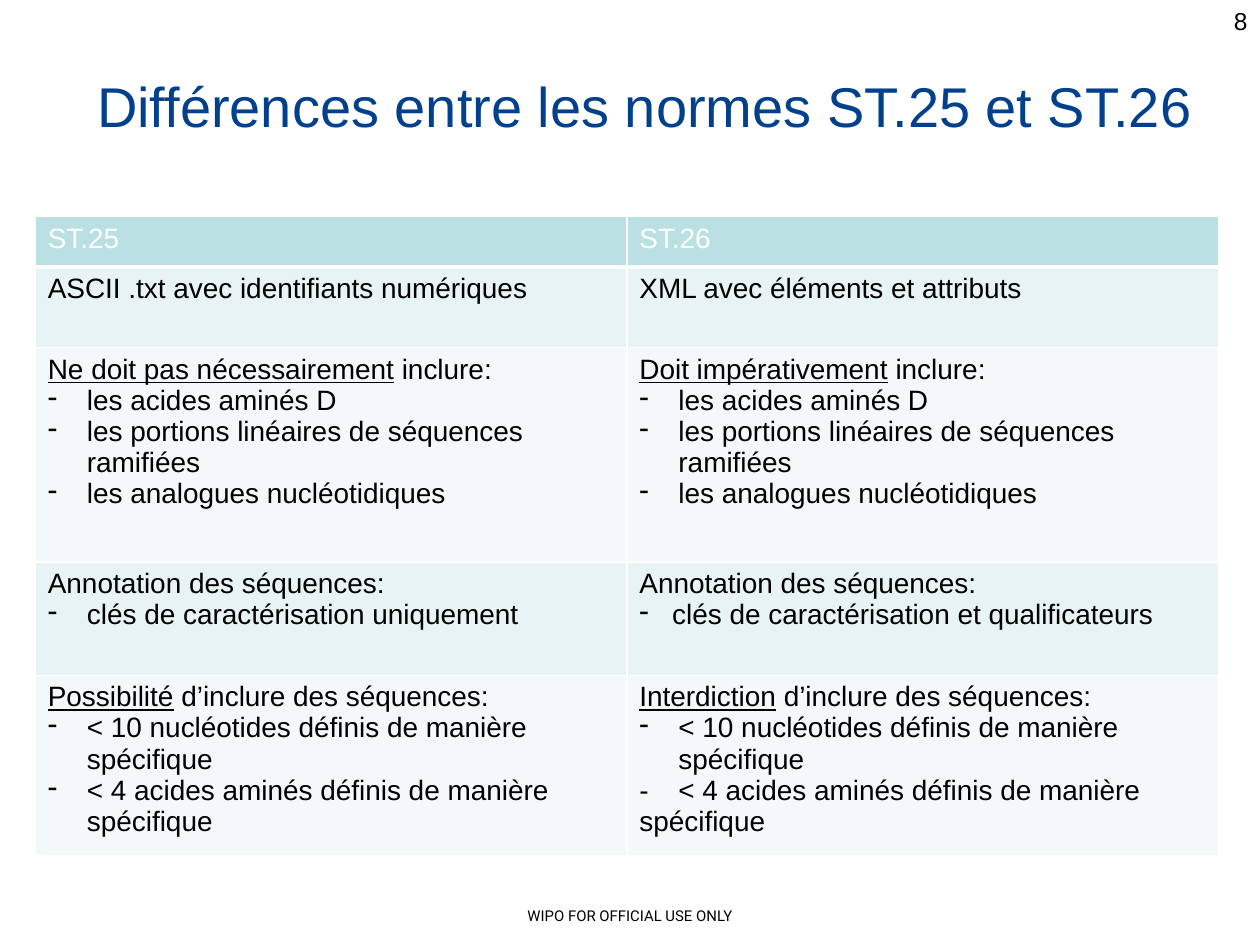
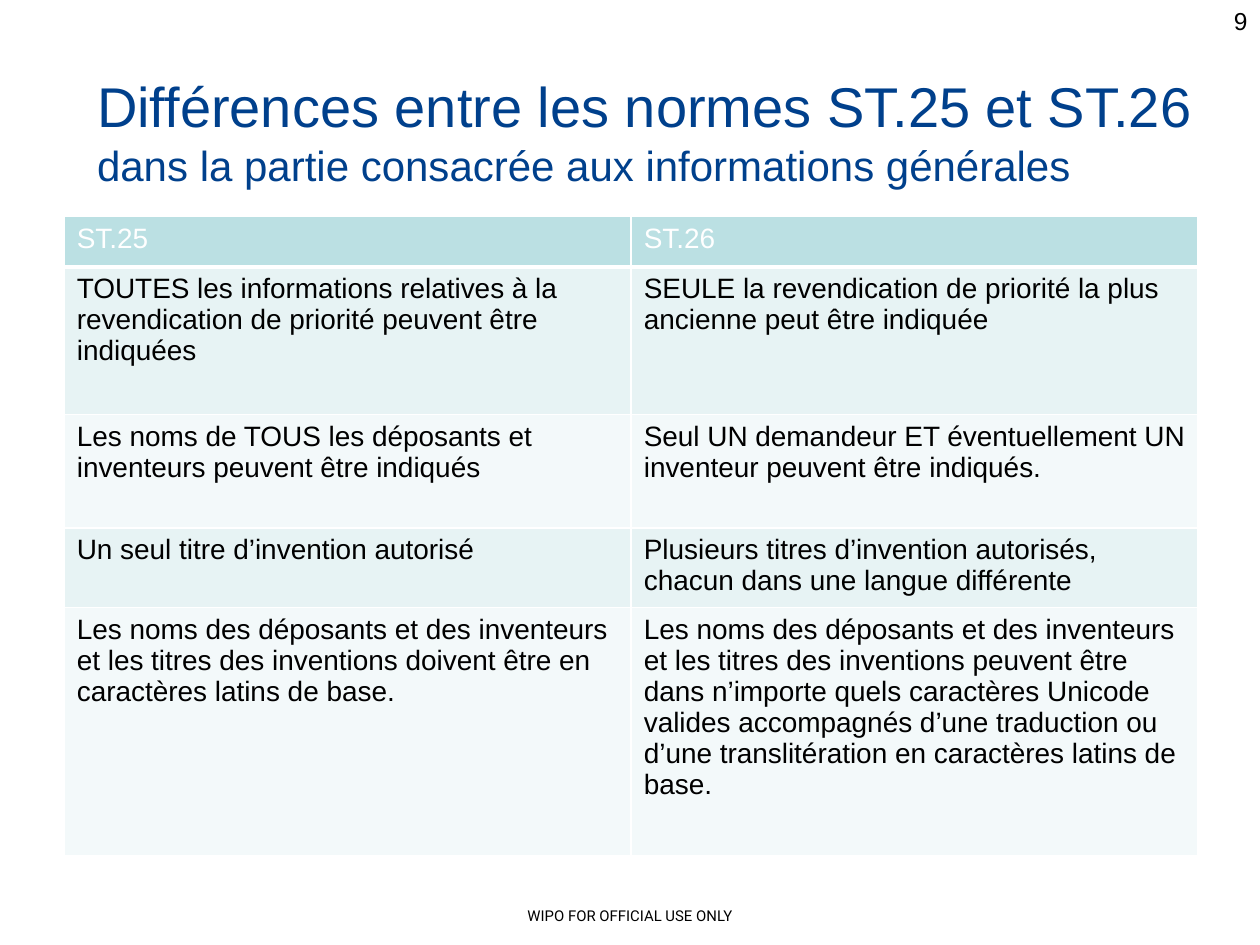
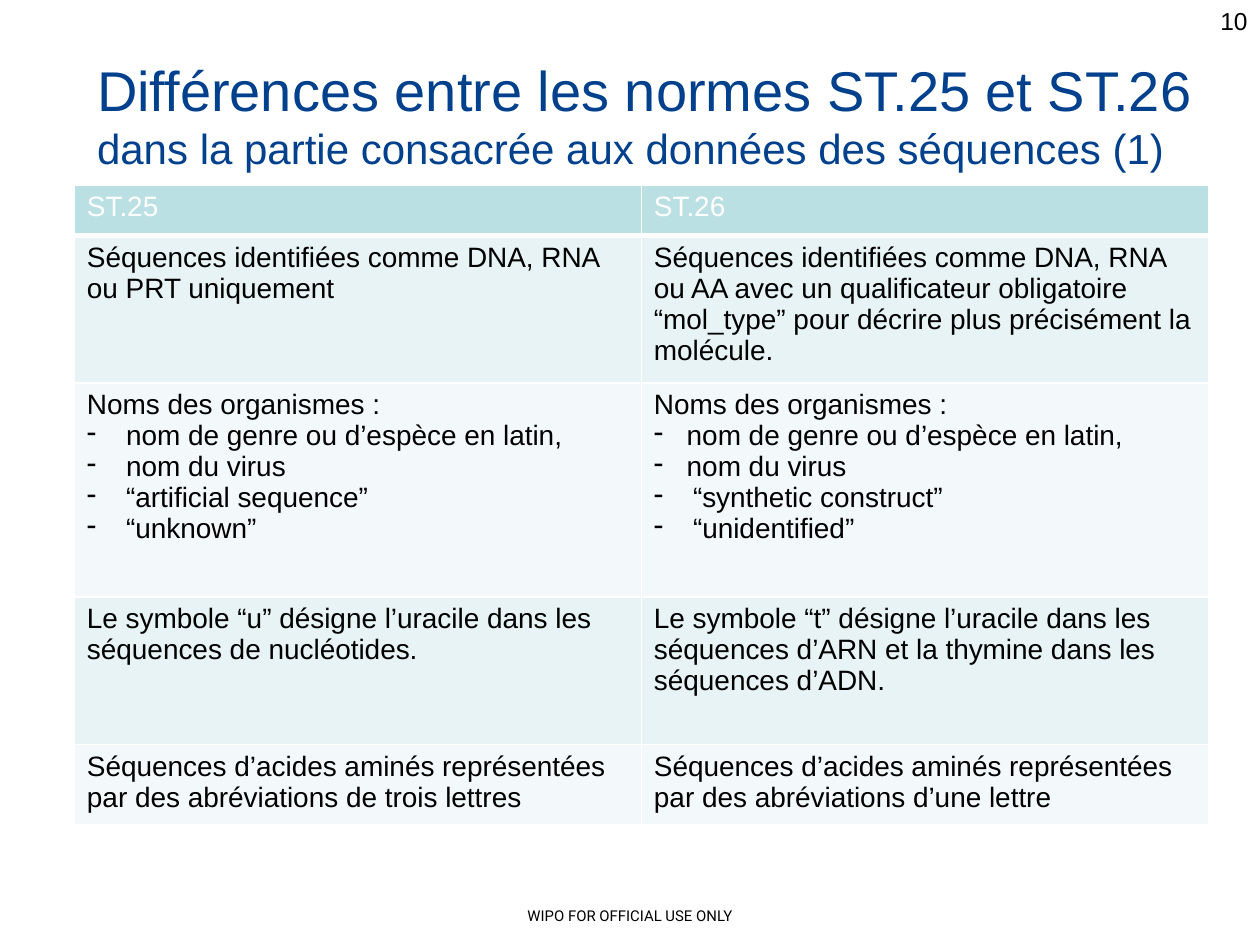
from dataclasses import dataclass

from lxml import etree
from pptx import Presentation
from pptx.dml.color import RGBColor
from pptx.enum.text import MSO_ANCHOR, MSO_AUTO_SIZE, PP_ALIGN
from pptx.oxml.ns import qn
from pptx.util import Inches, Pt

LEFT, MID, RIGHT = PP_ALIGN.LEFT, PP_ALIGN.CENTER, PP_ALIGN.RIGHT
TOP = MSO_ANCHOR.TOP
FIXED = MSO_AUTO_SIZE.NONE
COLS, ROWS = 100, 75


@dataclass(frozen=True)
class Theme:
    ink: str = "000000"
    navy: str = "00408C"
    white: str = "FFFFFF"
    head: str = "BBE0E3"
    bands: tuple = ("F3F9FA", "E7F3F4")
    face: str = "Arial"
    foot: str = "Roboto"
    big: float = 32
    sub: float = 24
    body: float = 16
    page: float = 14
    note: float = 8.5
    hang: float = 0.31
    tight: float = 0.26


class Deck:
    def __init__(self, theme):
        self.theme = theme
        self.prs = Presentation()
        self.prs.slide_width, self.prs.slide_height = Inches(10), Inches(7.5)
        self.base = self.prs.slide_layouts[5]
        self.slide = None

    def at(self, x, y, wide, high):
        col, row = self.prs.slide_width / COLS, self.prs.slide_height / ROWS
        return int(x * col), int(y * row), int(wide * col), int(high * row)

    def font(self, para, size, color, face=None):
        font = para.font
        font.size = Pt(size)
        font.name = face or self.theme.face
        font.color.rgb = RGBColor.from_string(color)

    def start(self, page):
        self.slide = self.prs.slides.add_slide(self.base)
        if page == FIRST:
            box = self.label("WIPO FOR OFFICIAL USE ONLY", (0, 71.5, 100, 2.4),
                             MID, self.theme.note, self.theme.foot)
            self.base.shapes.element.append(box.element)
        self.label(str(page), (76.7, 0, 23.3, 5.2), RIGHT, self.theme.page)

    def label(self, text, spot, align, size, face=None):
        box = self.slide.shapes.add_textbox(*self.at(*spot))
        box.text_frame.word_wrap = True
        para = box.text_frame.paragraphs[0]
        para.text, para.alignment = text, align
        self.font(para, size, self.theme.ink, face)
        return box

    def title(self, lines, y):
        shape = self.slide.shapes.title
        shape.left, shape.top, shape.width, shape.height = self.at(6.7, y, 90, 12.5)
        frame = shape.text_frame
        frame.auto_size, frame.vertical_anchor = FIXED, TOP
        frame.margin_top = Inches(0.1)
        frame.text = "\n".join(lines)
        for para, size in zip(frame.paragraphs, (self.theme.big, self.theme.sub)):
            para.alignment = LEFT
            self.font(para, size, self.theme.navy)

    def table(self, x, y, wide, highs, rows):
        rows = [("ST.25", "ST.26"), *rows]
        grid = self.slide.shapes.add_table(
            len(rows), 2, *self.at(x, y, wide, sum(highs))).table
        for num, (high, texts) in enumerate(zip(highs, rows)):
            grid.rows[num].height = self.at(0, 0, 0, high)[3]
            for col, text in enumerate(texts):
                self.cell(grid.cell(num, col), text, num == 0,
                          self.theme.bands[num % 2])

    def cell(self, cell, text, top, band):
        look = self.theme
        self.edges(cell, 3 if top else 1)
        cell.fill.solid()
        cell.fill.fore_color.rgb = RGBColor.from_string(look.head if top else band)
        for num, line in enumerate(text.split("\n")):
            frame = cell.text_frame
            para = frame.add_paragraph() if num else frame.paragraphs[0]
            self.fill(para, self.mark(para, line))
            self.font(para, look.body, look.white if top else look.ink)

    def mark(self, para, line):
        look = self.theme
        props = para._p.get_or_add_pPr()
        sign, rest = line[:2], line[2:]
        if sign in ("- ", "~ "):
            step = Inches(look.hang if sign == "- " else look.tight)
            props.set("marL", str(step))
            props.set("indent", str(-step))
            etree.SubElement(props, qn("a:buChar"), char="-")
            return rest
        if sign == "> ":
            tabs = etree.SubElement(props, qn("a:tabLst"))
            etree.SubElement(tabs, qn("a:tab"), pos=str(Inches(look.hang)), algn="l")
            return "-\t" + rest
        return line

    def fill(self, para, line):
        for num, part in enumerate(line.split("|")):
            if part:
                run = para.add_run()
                run.text = part
                if num % 2:
                    run.font.underline = True

    def edges(self, cell, low):
        props = cell._tc.get_or_add_tcPr()
        for side, size in zip("LRTB", (1, 1, 1, low)):
            line = etree.SubElement(props, qn("a:ln" + side), w=str(Pt(size)))
            paint = etree.SubElement(line, qn("a:solidFill"))
            etree.SubElement(paint, qn("a:srgbClr"), val=self.theme.white)


FIRST = 8
HEAD = "Différences entre les normes ST.25 et ST.26"
ACIDS = """
- les acides aminés D
- les portions linéaires de séquences ramifiées
- les analogues nucléotidiques"""
SHORT = """ d’inclure des séquences:
- < 10 nucléotides définis de manière spécifique
"""
FOUR = "< 4 acides aminés définis de manière spécifique"
NOTES = "Annotation des séquences:\n"
NAMES = "Noms des organismes :\n"
WHO = "Les noms des déposants et des inventeurs et les titres des inventions "
AMINO = "Séquences d’acides aminés représentées par des abréviations "

PAGES = [
    ([HEAD], 4.7, (2.8, 17.2, 93.9), (4, 6.4, 17, 9, 14.3), [
        ("ASCII .txt avec identifiants numériques",
         "XML avec éléments et attributs"),
        ("|Ne doit pas nécessairement| inclure:" + ACIDS,
         "|Doit impérativement| inclure:" + ACIDS),
        (NOTES + "- clés de caractérisation uniquement",
         NOTES + "~ clés de caractérisation et qualificateurs"),
        ("|Possibilité|" + SHORT + "- " + FOUR,
         "|Interdiction|" + SHORT + "> " + FOUR),
    ]),
    ([HEAD, "dans la partie consacrée aux informations générales"],
     4.7, (5.1, 17.2, 90), (4, 11.7, 9, 6.3, 19.7), [
        ("TOUTES les informations relatives à la revendication de priorité "
         "peuvent être indiquées",
         "SEULE la revendication de priorité la plus ancienne peut être indiquée"),
        ("Les noms de TOUS les déposants et inventeurs peuvent être indiqués",
         "Seul UN demandeur ET éventuellement UN inventeur peuvent être indiqués."),
        ("Un seul titre d’invention autorisé",
         "Plusieurs titres d’invention autorisés, chacun dans une langue différente"),
        (WHO + "doivent être en caractères latins de base.",
         WHO + "peuvent être dans n’importe quels caractères Unicode valides "
         "accompagnés d’une traduction ou d’une translitération en caractères "
         "latins de base."),
    ]),
    ([HEAD, "dans la partie consacrée aux données des séquences (1)"],
     3.4, (5.9, 14.7, 90), (4, 11.7, 17, 11.7, 6.3), [
        ("Séquences identifiées comme DNA, RNA ou PRT uniquement",
         "Séquences identifiées comme DNA, RNA ou AA avec un qualificateur "
         "obligatoire “mol_type” pour décrire plus précisément la molécule."),
        (NAMES + "- nom de genre ou d’espèce en latin,\n- nom du virus\n"
         "- “artificial sequence”\n- “unknown”",
         NAMES + "~ nom de genre ou d’espèce en latin,\n~ nom du virus\n"
         "- “synthetic construct”\n- “unidentified”"),
        ("Le symbole “u” désigne l’uracile dans les séquences de nucléotides.",
         "Le symbole “t” désigne l’uracile dans les séquences d’ARN et la thymine "
         "dans les séquences d’ADN."),
        (AMINO + "de trois lettres", AMINO + "d’une lettre"),
    ]),
]


def main():
    deck = Deck(Theme())
    for page, (lines, y, spot, highs, rows) in enumerate(PAGES, FIRST):
        deck.start(page)
        deck.title(lines, y)
        deck.table(*spot, highs, rows)
    deck.prs.save("out.pptx")


if __name__ == "__main__":
    main()
